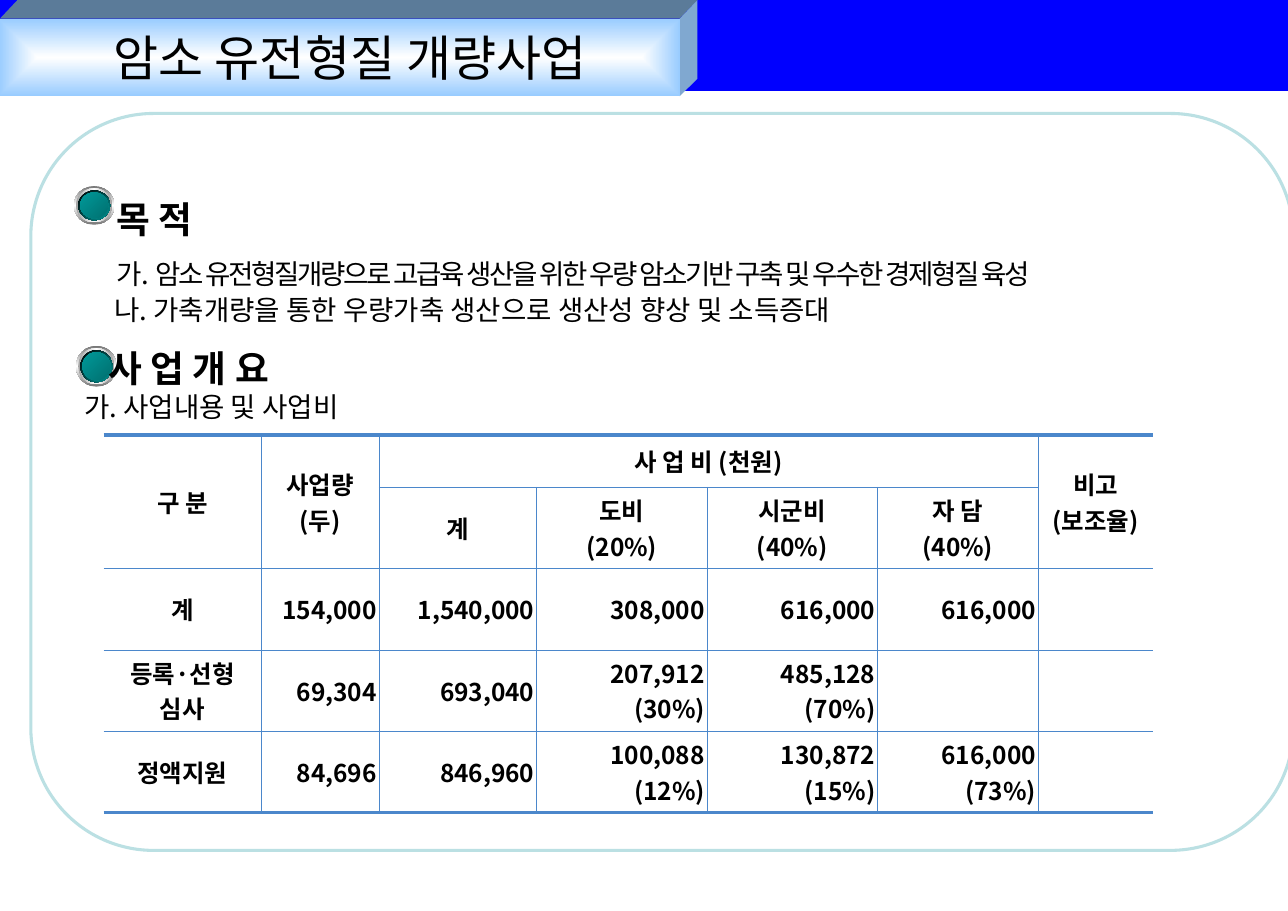
from pptx import Presentation
from pptx.dml.color import RGBColor
from pptx.enum.shapes import MSO_SHAPE as Shape
from pptx.enum.text import MSO_ANCHOR as Anchor, MSO_AUTO_SIZE as AutoSize, PP_ALIGN as Align
from pptx.oxml.ns import qn
from pptx.util import Pt
from lxml.etree import SubElement

COLORS = {
    "text": "000000", "strip": "0000FF", "frame": "BBE0E3", "rule": "4B87CB",
    "white": "FFFFFF", "sky": "99CCFF", "banner top": "5B7B99", "banner side": "80A8D0",
    "gray": "767676", "silver": "A2A2A2", "black": "000000",
    "teal": "009999", "dark teal": "007575", "deep teal": "007070",
}
FONT = "Noto Sans CJK KR"
THIN, THICK = 0.28, 2.55

# Bullet ball layers: inset, gradient colours, angle
BALL_LAYERS = [
    (0, ("gray", "white", "gray"), 90),
    (1.44, ("silver", "white", "silver"), 0),
    (2.88, ("white", "teal", "white"), 45),
    (2.88, ("black", "teal"), 45),
    (4.1, ("dark teal", "teal", "dark teal"), 315),
    (4.1, ("teal", "deep teal"), 45),
]

COLUMNS = [103, 77, 103, 111.4, 111.4, 105, 75]
ROWS = [34] + [53.2] * 4
COSTS = [
    ["구 분", "사업량\n(두)", "사 업 비 (천원)", "", "", "", "비고\n(보조율)"],
    ["", "", "계", "도비\n(20%)", "시군비\n(40%)", "자 담\n(40%)", ""],
    ["계", "154,000", "1,540,000", "308,000", "616,000", "616,000", ""],
    ["등록·선형\n심사", "69,304", "693,040", "207,912\n(30%)", "485,128\n(70%)", "", ""],
    ["정액지원", "84,696", "846,960", "100,088\n(12%)", "130,872\n(15%)", "616,000\n(73%)", ""],
]
MERGES = [((0, 0), (1, 0)), ((0, 1), (1, 1)), ((0, 2), (0, 5)), ((0, 6), (1, 6))]


def rgb(name):
    return RGBColor.from_string(COLORS[name])


def write(para, text, size=18, bold=False, spacing=0, align=Align.LEFT, indent=0, line=None):
    """Add a formatted span to a paragraph."""
    props = para._p.get_or_add_pPr()
    props.set("marL", str(Pt(indent)))
    props.set("indent", "0")
    if props.find(qn("a:buNone")) is None:
        SubElement(props, qn("a:buNone"))
    para.alignment = align
    para.space_before = Pt(0)
    if line:
        para.line_spacing = Pt(line)
    span = para.add_run()
    span.text = text
    span.font.size, span.font.bold, span.font.name = Pt(size), bold, FONT
    span.font.color.rgb = rgb("text")
    span_props = span._r.get_or_add_rPr()
    if spacing:
        span_props.set("spc", str(round(spacing * 100)))
    SubElement(span_props, qn("a:ea"), typeface=FONT)


def paint_gradient(shape, names, angle=None):
    """Spread colours evenly, along an angle or outwards from the centre."""
    shape.fill.gradient()
    grad = shape._element.spPr.find(qn("a:gradFill"))
    for child in list(grad):
        grad.remove(child)
    stops = SubElement(grad, qn("a:gsLst"))
    for i, name in enumerate(names):
        stop = SubElement(stops, qn("a:gs"), pos=str(100000 * i // (len(names) - 1)))
        SubElement(stop, qn("a:srgbClr"), val=COLORS[name])
    if angle is None:
        centre = SubElement(grad, qn("a:path"), {"path": "rect"})
        SubElement(centre, qn("a:fillToRect"), dict.fromkeys("ltrb", "50000"))
    else:
        SubElement(grad, qn("a:lin"), ang=str(angle * 60000), scaled="1")


def set_borders(cell, left=0, right=0, top=0, bottom=0):
    """Draw cell edges; a width of 0 hides the edge."""
    props = cell._tc.get_or_add_tcPr()
    for i, (side, width) in enumerate(zip("LRTB", (left, right, top, bottom))):
        edge = props.makeelement(qn("a:ln" + side), {"w": str(Pt(width))})
        props.insert(i, edge)
        if width:
            fill = SubElement(edge, qn("a:solidFill"))
            SubElement(fill, qn("a:srgbClr"), val=COLORS["rule"])
        else:
            SubElement(edge, qn("a:noFill"))


class Page:
    def __init__(self, deck):
        self.slide = deck.slides.add_slide(deck.slide_layouts[1])
        self.shapes = self.slide.shapes

    def placeholder(self, index, x, y, w, h, anchor):
        box = self.slide.placeholders[index]
        box.left, box.top, box.width, box.height = Pt(x), Pt(y), Pt(w), Pt(h)
        box._element.getparent().append(box._element)  # bring to front
        return self.prepare(box, anchor)

    def text_box(self, x, y, w, h):
        box = self.shapes.add_textbox(Pt(x), Pt(y), Pt(w), Pt(h))
        return self.prepare(box, Anchor.TOP)

    def prepare(self, box, anchor):
        frame = box.text_frame
        frame.word_wrap, frame.auto_size = True, AutoSize.NONE
        frame.vertical_anchor = anchor
        return box

    def lines(self, box, lines):
        frame = box.text_frame
        for i, (spans, layout) in enumerate(lines):
            para = frame.add_paragraph() if i else frame.paragraphs[0]
            for text, style in spans:
                write(para, text, **style, **layout)

    def face(self, points, color):
        outline = [(Pt(x), Pt(y)) for x, y in points]
        builder = self.shapes.build_freeform(*outline[0], scale=1.0)
        builder.add_line_segments(outline[1:], close=True)
        shape = builder.convert_to_shape()
        shape.shadow.inherit = False
        shape.fill.solid()
        shape.fill.fore_color.rgb = rgb(color)
        shape.line.fill.background()

    def ball(self, x, y, w, h):
        group = self.shapes.add_group_shape()
        for inset, names, angle in BALL_LAYERS:
            layer = group.shapes.add_shape(
                Shape.OVAL, Pt(x + inset), Pt(y + inset), Pt(w - 2 * inset), Pt(h - 2 * inset))
            layer.shadow.inherit = False
            paint_gradient(layer, names, angle)
            layer.line.fill.background()

    def outline(self, x, y, w, h):
        frame = self.shapes.add_shape(Shape.ROUNDED_RECTANGLE, Pt(x), Pt(y), Pt(w), Pt(h))
        frame.shadow.inherit = False
        frame.fill.background()
        frame.line.color.rgb, frame.line.width = rgb("frame"), Pt(2)

    def table(self, x, y, columns, rows):
        table = self.shapes.add_table(
            len(rows), len(columns), Pt(x), Pt(y), Pt(sum(columns)), Pt(sum(rows))).table
        table.first_row = table.horz_banding = False
        for column, width in zip(table.columns, columns):
            column.width = Pt(width)
        for row, height in zip(table.rows, rows):
            row.height = Pt(height)
        return table

    def cost_table(self, x, y):
        table = self.table(x, y, COLUMNS, ROWS)
        last_row, last_col = len(ROWS) - 1, len(COLUMNS) - 1
        for first, last in MERGES:
            table.cell(*first).merge(table.cell(*last))
        for r, row in enumerate(COSTS):
            for c, text in enumerate(row):
                cell = table.cell(r, c)
                cell.fill.background()
                cell.vertical_anchor = Anchor.MIDDLE
                cell.margin_left = cell.margin_right = Pt(1.44)
                cell.margin_top = cell.margin_bottom = Pt(1.44)
                bottom_row = last_row if not cell.is_merge_origin else r + cell.span_height - 1
                set_borders(cell, left=THIN if c else 0, right=THIN if c < last_col else 0,
                            top=THIN if r else THICK,
                            bottom=THICK if r == bottom_row == last_row else THIN)
                align = Align.RIGHT if r > 1 and c else Align.CENTER
                for i, line in enumerate(text.split("\n") if text else []):
                    frame = cell.text_frame
                    para = frame.add_paragraph() if i else frame.paragraphs[0]
                    write(para, line, size=16, bold=True, align=align)


def main():
    deck = Presentation()
    deck.slide_width, deck.slide_height = Pt(841.68), Pt(595.44)
    page = Page(deck)
    heading, plain = dict(size=24, bold=True), dict(size=18)

    # Blue strip across the top
    strip = page.table(0, 0, [841.68], [59.76]).cell(0, 0)
    strip.fill.solid()
    strip.fill.fore_color.rgb = rgb("strip")
    set_borders(strip)

    # Raised title banner
    page.face([(0, 12.2), (11.5, 0), (455.8, 0), (444.2, 12.2)], "banner top")
    page.face([(444.2, 12.2), (455.8, 0), (455.8, 51.5), (444.2, 62.8)], "banner side")
    title = page.placeholder(0, -0.72, 12.24, 444.96, 50.4, Anchor.MIDDLE)
    paint_gradient(title, ("white", "sky"))
    page.lines(title, [([("암소 유전형질 개량사업", dict(size=32))],
                        dict(align=Align.CENTER, indent=14.4))])

    # Frame and bullet balls
    page.outline(20.16, 74.16, 825.12, 481.68)
    page.ball(48.24, 121.68, 26.64, 25.2)
    page.ball(49.68, 226.08, 26.64, 26.64)

    # Purpose
    purpose = page.placeholder(1, 37.44, 103, 775.44, 113.8, Anchor.TOP)
    page.lines(purpose, [
        ([("목 적", heading)], dict(indent=31.5, line=51)),
        ([("가. ", plain),
          ("암소 유전형질개량으로 고급육 생산을 위한 우량 암소기반 구축 및 우수한 경제형질 육성",
           dict(size=18, spacing=-1.5))], dict(indent=31.5, line=32)),
        ([("나. 가축개량을 통한 우량가축 생산으로 생산성 향상 및 소득증대", plain)],
         dict(indent=30, line=23.5)),
    ])

    # Project outline
    overview = page.text_box(37.44, 216, 761.76, 64)
    page.lines(overview, [
        ([("사 업 개 요", heading)], dict(indent=26.5, line=35)),
        ([("가. 사업내용 및 사업비", plain)], dict(indent=10.5, line=22)),
    ])
    page.cost_table(67.7, 284.4)

    deck.save("out.pptx")


if __name__ == "__main__":
    main()
